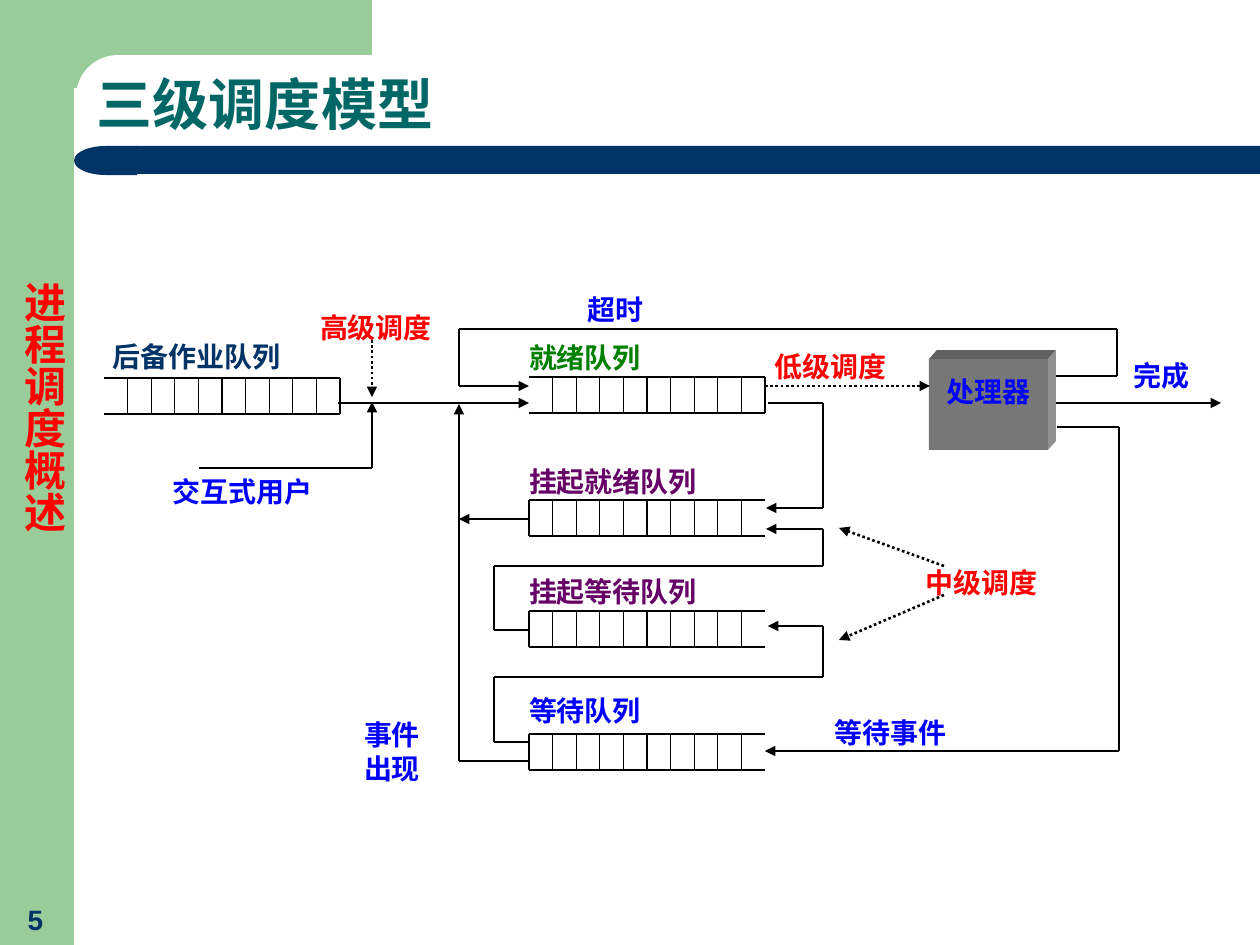
from lxml import etree
from pptx import Presentation
from pptx.dml.color import RGBColor
from pptx.enum.dml import MSO_LINE
from pptx.enum.shapes import MSO_CONNECTOR, MSO_SHAPE
from pptx.enum.text import MSO_ANCHOR, PP_ALIGN
from pptx.oxml.ns import qn
from pptx.util import Pt

PX = 914400 / 126
STRAIGHT, DOTTED = MSO_CONNECTOR.STRAIGHT, MSO_LINE.ROUND_DOT
RECT, ROUND, DELAY = MSO_SHAPE.RECTANGLE, MSO_SHAPE.ROUNDED_RECTANGLE, MSO_SHAPE.FLOWCHART_DELAY
TOP, BOTTOM = MSO_ANCHOR.TOP, MSO_ANCHOR.BOTTOM
LEFT, CENTER = PP_ALIGN.LEFT, PP_ALIGN.CENTER

CJK, LATIN, SERIF = "Noto Sans CJK SC", "Arial", "Times New Roman"
BLACK = RGBColor(0x00, 0x00, 0x00)
WHITE = RGBColor(0xFF, 0xFF, 0xFF)
SAGE = RGBColor(0x99, 0xCC, 0x99)
NAVY = RGBColor(0x00, 0x33, 0x66)
TEAL = RGBColor(0x00, 0x66, 0x66)
BLUE = RGBColor(0x00, 0x00, 0xFF)
RED = RGBColor(0xFF, 0x00, 0x00)
GREEN = RGBColor(0x00, 0x80, 0x00)
PURPLE = RGBColor(0x66, 0x00, 0x66)
FRONT_GRAY = RGBColor(0x77, 0x77, 0x77)
TOP_GRAY = RGBColor(0x60, 0x60, 0x60)
SIDE_GRAY = RGBColor(0x90, 0x90, 0x90)

# shape, box, fill, corner adjustment, rotation
BACKGROUND = [
    (RECT, (0, 0, 74, 945), SAGE, None, 0),
    (RECT, (74, -1, 298, 89), SAGE, None, 0),
    (ROUND, (76, 55, 703, 84), WHITE, 0.5, 0),
    (ROUND, (136, 146, 1124, 28), NAVY, 0, 0),
    (DELAY, (74, 146, 63, 29), NAVY, None, 180),
]

# left, top, side that is closed
QUEUES = [
    (104, 378, "right"),
    (529, 377, "right"),
    (529, 500, "left"),
    (529, 611, "left"),
    (529, 734, "left"),
]
QUEUE_W, QUEUE_H, SLOTS = 236, 36, 10

# each route ends in an arrowhead
ROUTES = [
    [(338, 403), (529, 403)],
    [(1056, 376), (1117, 376), (1117, 329), (459, 329), (459, 386), (529, 386)],
    [(1056, 403), (1221, 403)],
    [(1057, 427), (1119, 427), (1119, 751), (765, 751)],
    [(529, 761), (459, 761), (459, 404)],
    [(529, 519), (459, 519)],
    [(768, 403), (823, 403), (823, 508), (766, 508)],
    [(529, 630), (494, 630), (494, 566), (823, 566), (823, 529), (766, 529)],
    [(529, 742), (494, 742), (494, 677), (823, 677), (823, 626), (768, 626)],
    [(199, 468), (372, 468), (372, 402)],
]
DOTTED_ROUTES = [
    [(765, 386), (930, 386)],
    [(372, 340), (372, 397)],
    [(944, 566), (839, 528)],
    [(944, 595), (839, 640)],
]

LABELS = [
    (["后备作业队列"], (113, 340, 226, 38), NAVY),
    (["高级调度"], (320, 311, 121, 40), RED),
    (["超时"], (588, 293, 396, 37), BLUE),
    (["就绪队列"], (529, 341, 236, 37), GREEN),
    (["低级调度"], (775, 350, 126, 26), RED),
    (["完成"], (1134, 359, 87, 44), BLUE),
    (["交互式用户"], (173, 475, 146, 38), BLUE),
    (["挂起就绪队列"], (529, 465, 236, 37), PURPLE),
    (["挂起等待队列"], (529, 575, 236, 37), PURPLE),
    (["等待队列"], (529, 694, 236, 37), BLUE),
    (["等待事件"], (835, 716, 212, 37), BLUE),
    (["中级调度"], (926, 566, 139, 38), RED),
    (["事件", "出现"], (364, 718, 94, 72), BLUE),
]

CPU_BOX = (929, 359, 119, 91)
CPU_DEPTH = (8, 9)


def px(*values):
    return [round(v * PX) for v in values]


def paint(s, color):
    s.shadow.inherit = False
    s.fill.solid()
    s.fill.fore_color.rgb = color
    s.line.fill.background()
    return s


def add_block(shapes, kind, box, color):
    return paint(shapes.add_shape(kind, *px(*box)), color)


def add_face(shapes, points, color):
    builder = shapes.build_freeform(*points[0], scale=PX)
    builder.add_line_segments(points[1:])
    paint(builder.convert_to_shape(), color)


def add_line(shapes, start, end, width=1.5, dash=None, arrow=False):
    c = shapes.add_connector(STRAIGHT, *px(*start, *end))
    c.line.width = Pt(width)
    c.line.color.rgb = BLACK
    if dash:
        c.line.dash_style = dash
    if arrow:
        etree.SubElement(c.line._get_or_add_ln(), qn("a:tailEnd"), type="triangle")
    etree.SubElement(c._element.spPr, qn("a:effectLst"))


def add_route(shapes, points, dash=None):
    for i in range(1, len(points)):
        add_line(shapes, points[i - 1], points[i], dash=dash, arrow=i == len(points) - 1)


def add_queue(shapes, left, top, closed):
    right, bottom = left + QUEUE_W, top + QUEUE_H
    for y in (top, bottom):
        add_line(shapes, (left, y), (right, y))
    end = right if closed == "right" else left
    add_line(shapes, (end, top), (end, bottom))
    for i in range(1, SLOTS):
        x = left + i * QUEUE_W / SLOTS
        add_line(shapes, (x, top), (x, bottom), 0.75)


def write(s, lines, color, size=16, font=CJK, align=LEFT, anchor=TOP,
          insets=(0, 0, 0, 0), spacing=None):
    tf = s.text_frame
    tf.word_wrap = True
    tf.vertical_anchor = anchor
    for side, value in zip(("left", "top", "right", "bottom"), px(*insets)):
        setattr(tf, f"margin_{side}", value)
    for i, line in enumerate(lines):
        p = tf.add_paragraph() if i else tf.paragraphs[0]
        p.alignment = align
        if spacing:
            p.line_spacing = spacing
        r = p.add_run()
        r.text = line
        for name, value in {"name": font, "size": Pt(size), "bold": True}.items():
            setattr(r.font, name, value)
        r.font.color.rgb = color
        etree.SubElement(r._r.get_or_add_rPr(), qn("a:ea"), typeface=CJK)


def add_text(shapes, lines, box, color, **style):
    s = shapes.add_textbox(*px(*box))
    write(s, lines, color, **style)
    return s


def add_processor(shapes):
    left, top, width, height = CPU_BOX
    dx, dy = CPU_DEPTH
    right, bottom = left + width, top + height
    add_face(shapes, [(left, top), (left + dx, top - dy), (right + dx, top - dy),
                      (right, top)], TOP_GRAY)
    add_face(shapes, [(right, top), (right + dx, top - dy), (right + dx, bottom - dy),
                      (right, bottom)], SIDE_GRAY)
    front = add_block(shapes, RECT, CPU_BOX, FRONT_GRAY)
    write(front, ["处理器"], BLUE, align=CENTER, insets=(0, 16, 0, 6))


def main():
    prs = Presentation()
    prs.slide_width, prs.slide_height = px(1260, 945)
    shapes = prs.slides.add_slide(prs.slide_layouts[6]).shapes

    for kind, box, color, corner, rotation in BACKGROUND:
        s = add_block(shapes, kind, box, color)
        s.rotation = rotation
        if corner is not None:
            s.adjustments[0] = corner

    framed = {"anchor": BOTTOM, "insets": (13, 6, 13, 6)}
    add_text(shapes, ["5"], (-5, 895, 81, 47), NAVY, font=LATIN, align=CENTER, **framed)
    add_text(shapes, ["三级调度模型"], (84, 55, 1152, 89), TEAL, size=32, font=SERIF,
             spacing=0.9, **framed)

    for queue in QUEUES:
        add_queue(shapes, *queue)
    add_processor(shapes)
    for route in ROUTES:
        add_route(shapes, route)
    for route in DOTTED_ROUTES:
        add_route(shapes, route, DOTTED)
    for lines, box, color in LABELS:
        add_text(shapes, lines, box, color)

    s = add_text(shapes, ["进程调度概述"], (5, 276, 69, 534), RED, size=24, font=SERIF,
                 spacing=0.9, **framed)
    s.text_frame._txBody.bodyPr.set("vert", "eaVert")
    prs.save("out.pptx")


if __name__ == "__main__":
    main()
